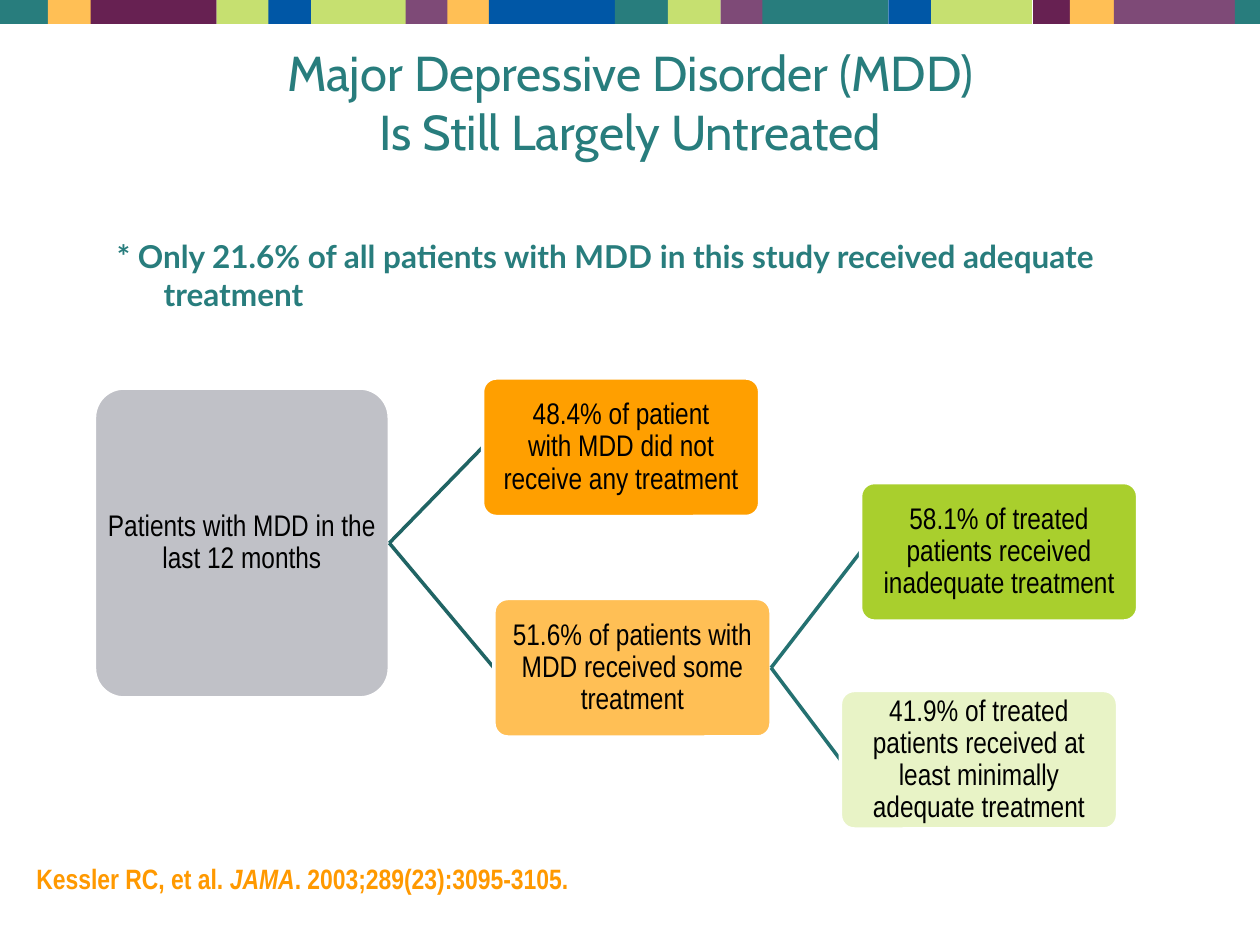
from copy import deepcopy

from lxml.etree import SubElement
from pptx import Presentation
from pptx.dml.color import RGBColor
from pptx.enum.shapes import MSO_CONNECTOR, MSO_SHAPE
from pptx.enum.text import MSO_ANCHOR, PP_ALIGN
from pptx.oxml.ns import qn
from pptx.util import Pt

PX = 9144  # EMU per px, 100 px to the inch

TEAL = RGBColor(0x28, 0x7D, 0x7D)
DARK_TEAL = RGBColor(0x20, 0x64, 0x64)
MID_TEAL = RGBColor(0x24, 0x71, 0x71)
PEACH = RGBColor(0xFF, 0xBF, 0x55)
PLUM = RGBColor(0x67, 0x21, 0x52)
MAUVE = RGBColor(0x7E, 0x4A, 0x77)
LIME = RGBColor(0xC6, 0xE0, 0x70)
BLUE = RGBColor(0x00, 0x57, 0xA6)
GREY = RGBColor(0xC0, 0xC1, 0xC7)
ORANGE = RGBColor(0xFF, 0x9F, 0x00)
CITATION_ORANGE = RGBColor(0xFF, 0x99, 0x00)
GREEN = RGBColor(0xA9, 0xCF, 0x2D)
PALE_GREEN = RGBColor(0xE8, 0xF3, 0xC6)
BLACK = RGBColor(0x00, 0x00, 0x00)
WHITE = RGBColor(0xFF, 0xFF, 0xFF)

STRIP = [  # left, width, colour
    (-3, 42, TEAL), (38, 35, PEACH), (72, 100, PLUM), (172, 42, LIME),
    (213, 35, BLUE), (247, 80, LIME), (322, 35, MAUVE), (355, 35, PEACH),
    (388, 100, BLUE), (488, 42, TEAL), (530, 42, LIME), (572, 35, MAUVE),
    (605, 100, TEAL), (705, 35, BLUE), (739, 80, LIME), (820, 30, PLUM),
    (849, 35, PEACH), (884, 100, MAUVE), (980, 20, TEAL),
]
NODE_SIZE = (220, 110)


def scaled(*lengths):
    return [length * PX for length in lengths]


def style_runs(paragraph, *, font, size, color, bold=None):
    for run in paragraph.runs:
        run.font.name = font
        run.font.size = Pt(size)
        run.font.color.rgb = color
        run.font.bold = bold
    for line_break in paragraph._p.findall(qn("a:br")):
        line_break.append(deepcopy(paragraph.runs[0]._r.rPr))


def write(paragraph, text, *, align=PP_ALIGN.LEFT, spacing=1.0, **run_format):
    paragraph.text = text
    paragraph.alignment = align
    paragraph.line_spacing = spacing
    style_runs(paragraph, **run_format)


def add_strip(slide):
    for left, width, color in STRIP:
        tile = slide.shapes.add_shape(MSO_SHAPE.RECTANGLE, *scaled(left, -3, width, 22))
        tile.shadow.inherit = False
        tile.fill.solid()
        tile.fill.fore_color.rgb = color
        tile.line.fill.background()


def add_title(slide, text):
    title = slide.shapes.title
    title.left, title.top, title.width, title.height = scaled(50, 30, 900, 101)
    title.text_frame.vertical_anchor = MSO_ANCHOR.MIDDLE
    write(title.text_frame.paragraphs[0], text, align=PP_ALIGN.CENTER,
          font="Cabin", size=28, color=TEAL)


def add_text_box(slide, left, top, width, height):
    """Add a wrapping text box and return its first paragraph."""
    frame = slide.shapes.add_textbox(*scaled(left, top, width, height)).text_frame
    frame.word_wrap = True
    return frame.paragraphs[0]


def add_node(slide, text, left, top, color, size=NODE_SIZE):
    node = slide.shapes.add_shape(MSO_SHAPE.ROUNDED_RECTANGLE, *scaled(left, top, *size))
    node.adjustments[0] = 0.1
    node.shadow.inherit = False
    node.fill.solid()
    node.fill.fore_color.rgb = color
    node.line.color.rgb = WHITE
    node.line.width = Pt(2)
    frame = node.text_frame
    frame.word_wrap = True
    frame.vertical_anchor = MSO_ANCHOR.MIDDLE
    frame.margin_left = frame.margin_right = frame.margin_top = frame.margin_bottom = PX
    write(frame.paragraphs[0], text, align=PP_ALIGN.CENTER, spacing=0.9,
          font="Arial Narrow", size=17, color=BLACK)
    return node


def add_branch(slide, parent, text, left, top, color, line_color):
    """Add a child node behind whose edge a line from the parent ends."""
    branch = slide.shapes.add_connector(
        MSO_CONNECTOR.STRAIGHT,
        parent.left + parent.width, parent.top + parent.height // 2,
        *scaled(left, top + NODE_SIZE[1] // 2))
    branch.line.color.rgb = line_color
    branch.line.width = Pt(2)
    SubElement(branch._element.spPr, qn("a:effectLst"))
    return add_node(slide, text, left, top, color)


def add_tree(slide):
    patients = add_node(slide, "Patients with MDD in the last 12 months",
                        75, 308, GREY, size=(234, 246))
    treated = add_branch(slide, patients, "51.6% of patients with MDD received some treatment",
                         392, 475, PEACH, DARK_TEAL)
    add_branch(slide, treated, "58.1% of treated patients received inadequate treatment",
               683, 383, GREEN, MID_TEAL)
    add_branch(slide, treated,
               "41.9% of treated patients received at least minimally adequate treatment",
               667, 548, PALE_GREEN, MID_TEAL)
    add_branch(slide, patients,
               "48.4% of patient\vwith MDD did not\vreceive any treatment",
               383, 300, ORANGE, DARK_TEAL)


def add_key_finding(slide):
    paragraph = add_text_box(slide, 83, 183, 865, 40)
    properties = paragraph._p.get_or_add_pPr()
    properties.set("marL", str(37 * PX))
    properties.set("indent", str(-37 * PX))
    write(paragraph,
          "* Only 21.6% of all patients with MDD in this study received adequate treatment",
          font="Lato", size=18, color=TEAL, bold=True)


def add_citation(slide):
    paragraph = add_text_box(slide, 19, 684, 901, 31)
    paragraph.line_spacing = 0.8
    for text, italic in [("Kessler RC, et al. ", False), ("JAMA", True),
                         (". 2003;289(23):3095-3105.", False)]:
        run = paragraph.add_run()
        run.text = text
        run.font.italic = italic
    style_runs(paragraph, font="Arial Narrow", size=16, color=CITATION_ORANGE, bold=True)


def main():
    presentation = Presentation()
    presentation.slide_width, presentation.slide_height = scaled(1000, 750)
    slide = presentation.slides.add_slide(presentation.slide_layouts[5])
    add_strip(slide)
    add_title(slide, "Major Depressive Disorder (MDD)\vIs Still Largely Untreated")
    add_tree(slide)
    add_key_finding(slide)
    add_citation(slide)
    presentation.save("out.pptx")


if __name__ == "__main__":
    main()
